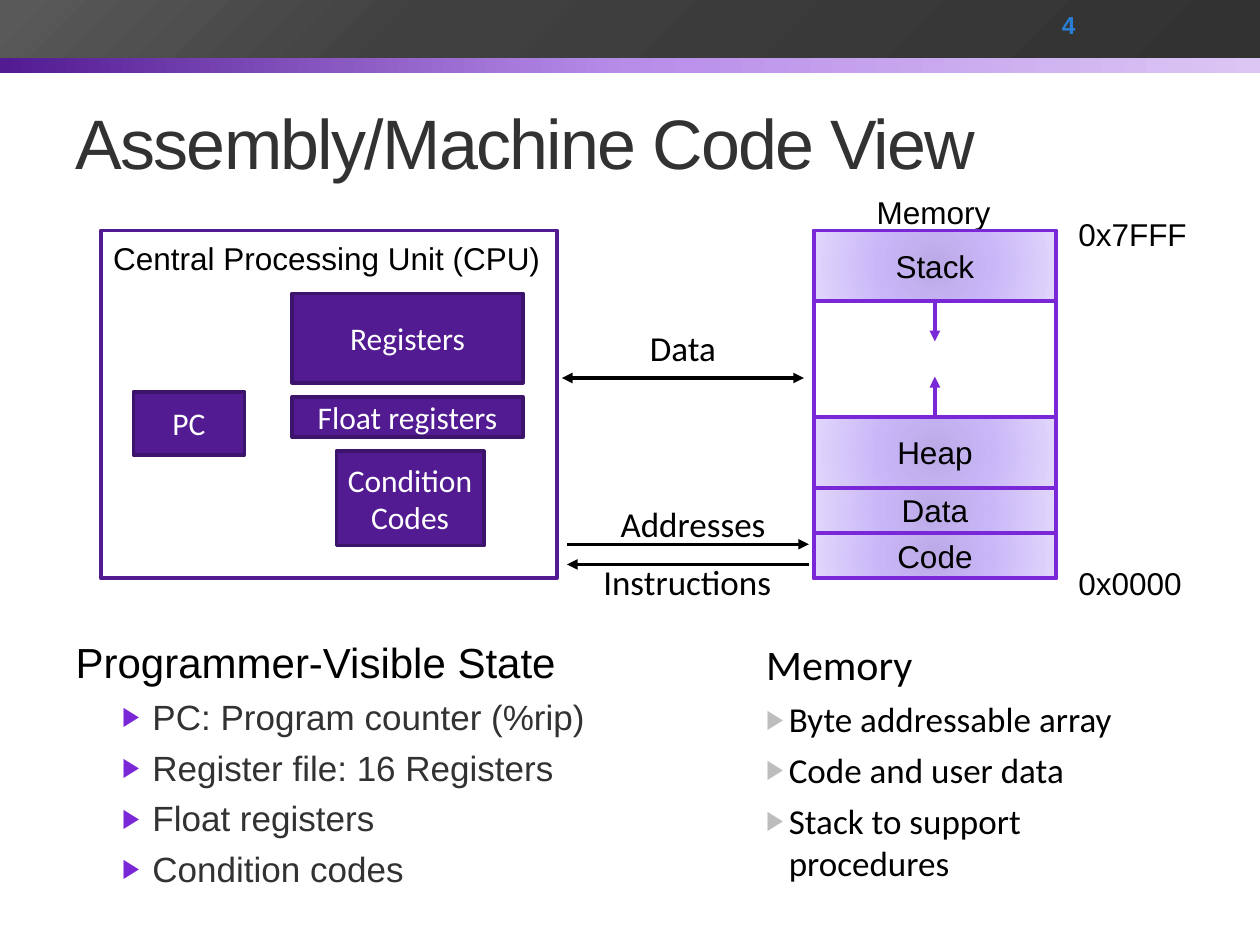
"""Build the Assembly/Machine Code View slide."""
from dataclasses import dataclass

from lxml.etree import SubElement
from pptx import Presentation
from pptx.dml.color import RGBColor
from pptx.enum.shapes import MSO_CONNECTOR, MSO_SHAPE
from pptx.enum.text import MSO_ANCHOR, MSO_AUTO_SIZE, PP_ALIGN
from pptx.oxml import parse_xml
from pptx.oxml.ns import nsdecls, qn
from pptx.util import Inches, Pt


@dataclass(frozen=True)
class Theme:
    sans: str = "Arial"
    humanist: str = "Calibri"
    black: str = "000000"
    white: str = "FFFFFF"
    ink: str = "323232"
    purple: str = "521B92"
    edge: str = "3D146C"
    violet: str = "7A27D8"
    gray: str = "BDBDBD"
    blue: str = "297FD5"
    title: int = 40
    heading: int = 24
    item: int = 20
    label: int = 18
    number: int = 14
    outline: float = 2.08
    segment: float = 2.25
    arrow: float = 2
    stripe: tuple = (((0, "521B92"), (50, "B88DEA"), (100, "DCC6F4")),
                     '<a:lin ang="0" scaled="0"/>')
    banner: tuple = (((0, "323232"), (66, "404040"), (99, "595959")),
                     '<a:lin ang="13500000" scaled="0"/>')
    lavender: tuple = (((0, "BAA9E6"), (45, "C9B6F8"), (100, "E1D7FC")),
                       '<a:path path="circle"><a:fillToRect l="100000" t="100000" '
                       'r="100000" b="100000"/></a:path>')


theme = Theme()
deck = Presentation()
deck.slide_width, deck.slide_height = Inches(10), Inches(7.5)
slide = deck.slides.add_slide(deck.slide_layouts[3])


def add_block(place, words="", fill=None, line=None, width=theme.outline, font=theme.sans,
              size=theme.label, color=theme.black, align=PP_ALIGN.CENTER, wrap=True):
    bounds = [Inches(length) for length in place]
    if fill is None:
        block = slide.shapes.add_textbox(*bounds)
    else:
        block = slide.shapes.add_shape(MSO_SHAPE.RECTANGLE, *bounds)
        block.shadow.inherit = False
        if isinstance(fill, str):
            block.fill.solid()
            block.fill.fore_color.rgb = RGBColor.from_string(fill)
        else:
            stops, shading = fill
            marks = "".join(f'<a:gs pos="{spot * 1000}"><a:srgbClr val="{tone}"/></a:gs>'
                            for spot, tone in stops)
            block.fill.background()
            properties = block._element.spPr
            properties.replace(properties.find(qn("a:noFill")), parse_xml(
                f'<a:gradFill {nsdecls("a")} rotWithShape="1"><a:gsLst>{marks}</a:gsLst>'
                f'{shading}</a:gradFill>'))
        if line:
            block.line.color.rgb = RGBColor.from_string(line)
            block.line.width = Pt(width)
        else:
            block.line.fill.background()
    if words:
        frame = block.text_frame
        frame.text = words
        frame.word_wrap = wrap
        frame.vertical_anchor = MSO_ANCHOR.TOP if fill is None else MSO_ANCHOR.MIDDLE
        for paragraph in frame.paragraphs:
            paragraph.alignment = align
            paragraph.font.name, paragraph.font.size = font, Pt(size)
            paragraph.font.color.rgb = RGBColor.from_string(color)
    return block


def add_arrow(start, finish, color, width, ends):
    arrow = slide.shapes.add_connector(
        MSO_CONNECTOR.STRAIGHT, *[Inches(length) for length in (*start, *finish)])
    arrow.line.color.rgb = RGBColor.from_string(color)
    arrow.line.width = Pt(width)
    for end in ends:
        SubElement(arrow.line._ln, qn(f"a:{end}"), type="triangle")
    SubElement(arrow._element.spPr, qn("a:effectLst"))


add_block((0, 0.24, 10, 0.34), fill=theme.stripe)
add_block((0, 0, 10, 0.46), fill=theme.banner)
page_number = add_block((8.33, 0.02, 1.17, 0.36), "4", size=theme.number,
                        color=theme.blue, align=PP_ALIGN.LEFT)
page_number.text_frame.vertical_anchor = MSO_ANCHOR.MIDDLE
page_number.text_frame.paragraphs[0].font.bold = True

title, state, memory = slide.placeholders
title.left, title.top, title.width, title.height = map(Inches, (0.5, 0.58, 9, 1.08))
title.text_frame.text = "Assembly/Machine Code View"
title.text_frame.auto_size = MSO_AUTO_SIZE.NONE
title.text_frame.vertical_anchor = MSO_ANCHOR.MIDDLE
headline = title.text_frame.paragraphs[0]
headline.alignment = PP_ALIGN.LEFT
headline.font.name, headline.font.size = theme.sans, Pt(theme.title)
headline.font.color.rgb = RGBColor.from_string(theme.ink)
headline.runs[0].font._element.set("spc", "-100")

lists = [
    (state, (0.5, 5, 5.31, 2.11), theme.sans, theme.ink, theme.violet,
     (0, 0.25, -0.25, 6), (1, 0.61, -0.24, 5),
     ["Programmer-Visible State", "PC: Program counter (%rip)",
      "Register file: 16 Registers", "Float registers", "Condition codes"]),
    (memory, (5.54, 5.02, 3.96, 2.14), theme.humanist, theme.black, theme.gray,
     (2, 0.44, 0, 5), (2, 0.62, -0.18, 5),
     ["Memory", "Byte addressable array", "Code and user data",
      "Stack to support procedures"]),
]
for body, place, font, item_color, bullet_color, heading_layout, item_layout, lines in lists:
    body.left, body.top, body.width, body.height = map(Inches, place)
    body.text_frame.text = "\n".join(lines)
    body.text_frame.auto_size = MSO_AUTO_SIZE.NONE
    for index, paragraph in enumerate(body.text_frame.paragraphs):
        level, margin, indent, gap = item_layout if index else heading_layout
        paragraph.level = level
        paragraph.space_before = Pt(gap)
        paragraph.font.name = font
        paragraph.font.size = Pt(theme.item if index else theme.heading)
        paragraph.font.color.rgb = RGBColor.from_string(item_color if index else theme.black)
        layout = paragraph._p.get_or_add_pPr()
        layout.set("marL", str(Inches(margin)))
        layout.set("indent", str(Inches(indent)))
        bullet = ([f'<a:buClr {nsdecls("a")}><a:srgbClr val="{bullet_color}"/></a:buClr>',
                   f'<a:buSzPct {nsdecls("a")} val="76000"/>',
                   f'<a:buChar {nsdecls("a")} char="▶"/>']
                  if index else [f'<a:buNone {nsdecls("a")}/>'])
        for part in bullet:
            layout.find(qn("a:defRPr")).addprevious(parse_xml(part))

add_block((6.46, 1.83, 1.92, 2.76), fill=theme.white, line=theme.violet)
add_block((0.8, 1.83, 3.62, 2.76), fill=theme.white, line=theme.purple)
for words, place in [("Memory", (6.86, 1.48, 1.11, 0.4)),
                     ("0x7FFF", (8.46, 1.66, 1.07, 0.4)),
                     ("0x0000", (8.46, 4.43, 1.03, 0.4)),
                     ("Central Processing Unit (CPU)", (0.8, 1.85, 3.74, 0.4))]:
    add_block(place, words, align=PP_ALIGN.LEFT, wrap=False)

for words, place in [("PC", (1.06, 3.11, 0.88, 0.5)),
                     ("Registers", (2.32, 2.33, 1.83, 0.71)),
                     ("Condition\nCodes", (2.67, 3.58, 1.17, 0.75)),
                     ("Float registers", (2.32, 3.15, 1.83, 0.32))]:
    add_block(place, words, theme.purple, theme.edge, font=theme.humanist,
              color=theme.white, wrap=False)

for words, top, height in [("Code", 4.23, 0.36), ("Data", 3.87, 0.36),
                           ("Stack", 1.83, 0.56), ("Heap", 3.31, 0.56)]:
    add_block((6.46, top, 1.92, height), words, theme.lavender, theme.violet, theme.segment)
for start, finish in [(3.31, 2.99), (2.39, 2.71)]:
    add_arrow((7.42, start), (7.42, finish), theme.violet, theme.outline, ["tailEnd"])

for left, y, ends in [(4.46, 3, ["headEnd", "tailEnd"]),
                      (4.5, 4.32, ["tailEnd"]), (4.5, 4.48, ["headEnd"])]:
    add_arrow((left, y), (left + 1.92, y), theme.black, theme.arrow, ends)
for words, place in [("Data", (4.46, 2.54, 1.92, 0.43)),
                     ("Addresses", (4.54, 3.94, 1.92, 0.43)),
                     ("Instructions", (4.54, 4.4, 1.83, 0.43))]:
    add_block(place, words, font=theme.humanist, size=theme.item)

deck.save("out.pptx")
